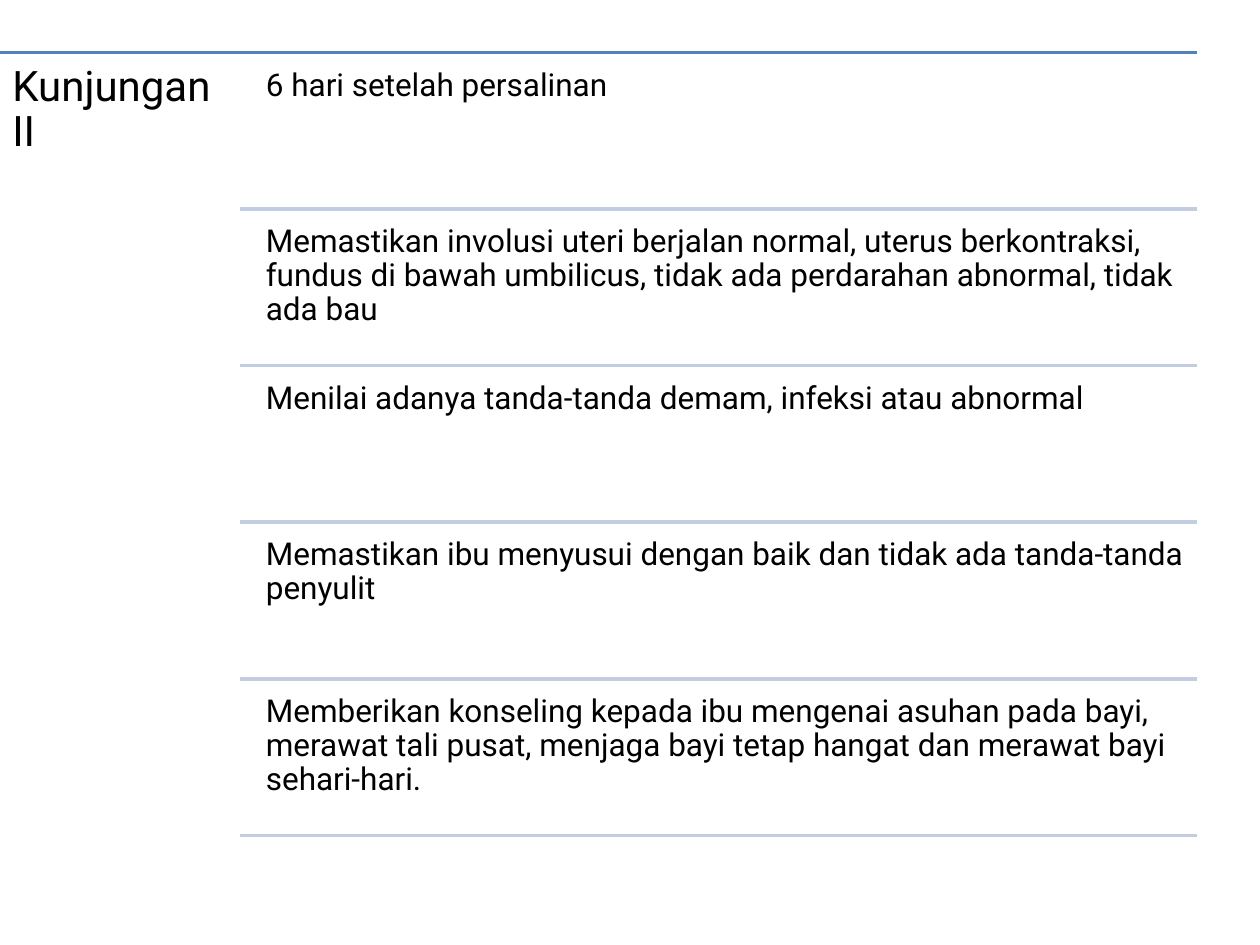
from dataclasses import dataclass

from lxml import etree
from pptx import Presentation
from pptx.dml.color import RGBColor
from pptx.enum.shapes import MSO_CONNECTOR
from pptx.enum.text import MSO_ANCHOR, PP_ALIGN
from pptx.oxml.ns import qn
from pptx.util import Cm, Pt

STRAIGHT = MSO_CONNECTOR.STRAIGHT
TOP = MSO_ANCHOR.TOP
LEFT = PP_ALIGN.LEFT


@dataclass(frozen=True)
class Theme:
    font: str = "Roboto"
    text: RGBColor = RGBColor(0x00, 0x00, 0x00)
    main_rule: RGBColor = RGBColor(0x4F, 0x81, 0xBD)
    row_rule: RGBColor = RGBColor(0xC2, 0xCD, 0xE1)
    heading_size: int = 24
    body_size: int = 18
    rule_width: int = 2
    line_spacing: float = 0.9


class VisitSlide:
    """Draws grouped text and rules on one slide in one theme."""

    def __init__(self, slide, theme):
        self.theme = theme
        self.shapes = slide.shapes.add_group_shape().shapes

    def rule(self, left, right, y, color):
        line = self.shapes.add_connector(STRAIGHT, Cm(left), Cm(y), Cm(right), Cm(y))
        line.line.color.rgb = color
        line.line.width = Pt(self.theme.rule_width)
        etree.SubElement(line._element.spPr, qn("a:effectLst"))

    def text(self, words, left, top, width, height, size, inset):
        shape = self.shapes.add_textbox(Cm(left), Cm(top), Cm(width), Cm(height))
        frame = shape.text_frame
        frame.word_wrap = True
        frame.vertical_anchor = TOP
        frame.margin_left = frame.margin_right = Cm(inset)
        frame.margin_top = frame.margin_bottom = Cm(inset)
        paragraph = frame.paragraphs[0]
        paragraph.text = words
        paragraph.alignment = LEFT
        paragraph.line_spacing = self.theme.line_spacing
        paragraph.font.name = self.theme.font
        paragraph.font.size = Pt(size)
        paragraph.font.color.rgb = self.theme.text


HEADING = "Kunjungan II"
STEPS = [
    "6 hari setelah persalinan",
    "Memastikan involusi uteri berjalan normal, uterus berkontraksi, "
    "fundus di bawah umbilicus, tidak ada perdarahan abnormal, tidak ada bau",
    "Menilai adanya tanda-tanda demam, infeksi atau abnormal",
    "Memastikan ibu menyusui dengan baik dan tidak ada tanda-tanda penyulit",
    "Memberikan konseling kepada ibu mengenai asuhan pada bayi, merawat tali "
    "pusat, menjaga bayi tetap hangat dan merawat bayi sehari-hari.",
]

# Layout in centimetres
LIST_TOP, LIST_BOTTOM = 1.06, 16.84
HEADING_WIDTH, HEADING_HEIGHT = 4.83, 15.95
STEP_LEFT, LIST_RIGHT = 5.18, 24.13
ROW_GAP = 0.15
HEADING_INSET, STEP_INSET = 0.25, 0.18


def main():
    presentation = Presentation()
    presentation.slide_width, presentation.slide_height = Cm(25.4), Cm(19.05)
    slide = presentation.slides.add_slide(presentation.slide_layouts[6])
    theme = Theme()
    visit = VisitSlide(slide, theme)

    # Heading column under the main rule
    visit.rule(0, LIST_RIGHT, LIST_TOP, theme.main_rule)
    visit.text(HEADING, 0, LIST_TOP, HEADING_WIDTH, HEADING_HEIGHT,
               theme.heading_size, HEADING_INSET)

    # Equal rows, each closed by a rule
    pitch = (LIST_BOTTOM - LIST_TOP) / len(STEPS)
    for index, step in enumerate(STEPS):
        top = LIST_TOP + index * pitch
        visit.text(step, STEP_LEFT, top + ROW_GAP, LIST_RIGHT - STEP_LEFT,
                   pitch - ROW_GAP, theme.body_size, STEP_INSET)
        visit.rule(HEADING_WIDTH, LIST_RIGHT, top + pitch, theme.row_rule)

    presentation.save("out.pptx")


if __name__ == "__main__":
    main()
